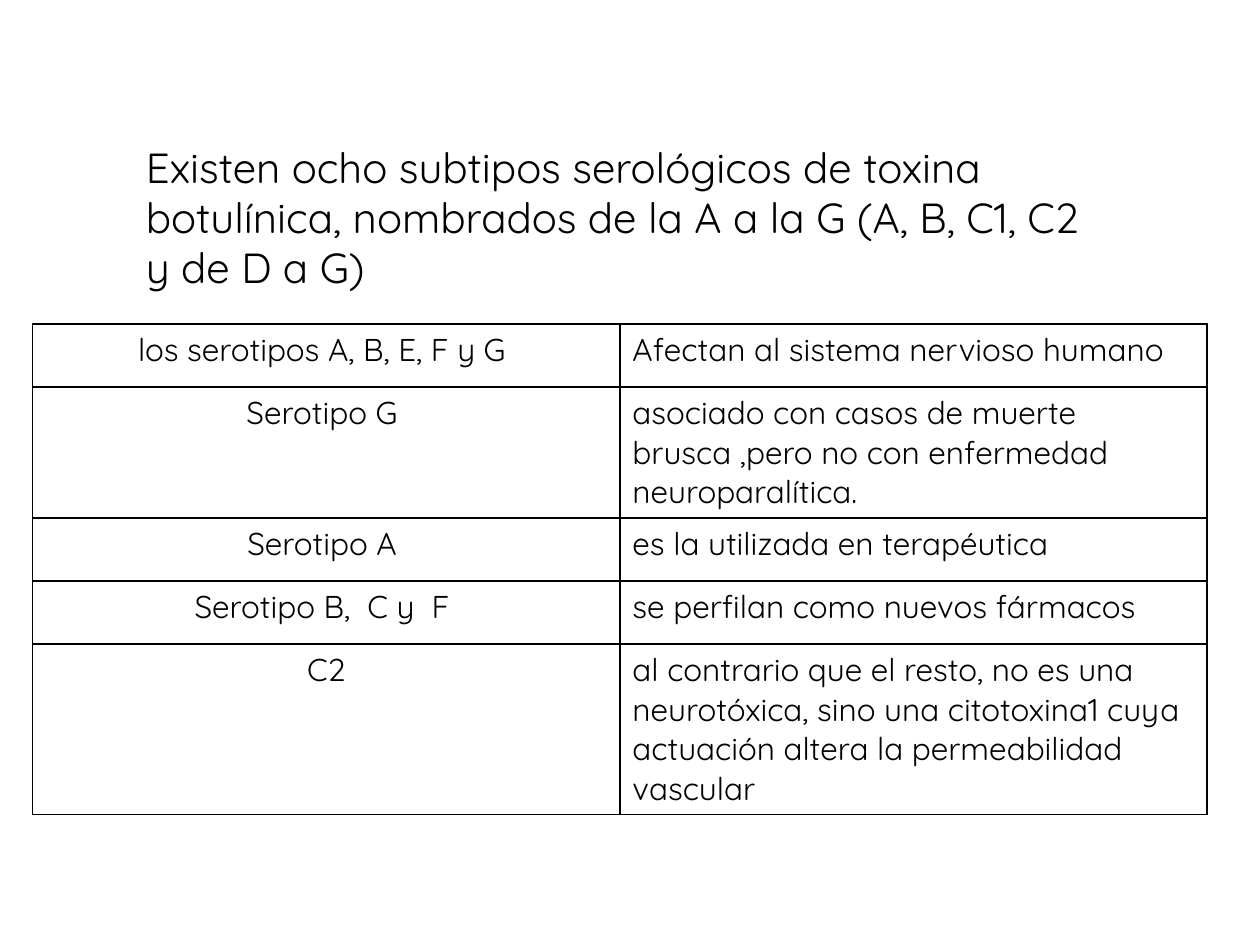
from typing import NamedTuple

from lxml import etree
from pptx import Presentation
from pptx import util as u
from pptx.dml.color import RGBColor
from pptx.enum import text as t
from pptx.oxml.ns import qn

FONT = "Quicksand"
HUES = {"ink": "000000"}


class Row(NamedTuple):
    type: str
    note: str
    high: float


ROWS = [
    Row("los serotipos A, B, E, F y G ", "Afectan al sistema nervioso humano", 0.5),
    Row("Serotipo G ", "asociado con casos de muerte brusca ,pero no con "
        "enfermedad neuroparalítica.", 0.87),
    Row("Serotipo A ", "es la utilizada en terapéutica", 0.5),
    Row("Serotipo B,  C y  F ", "se perfilan como nuevos fármacos", 0.5),
    Row("C2", "al contrario que el resto, no es una neurotóxica, sino una "
        "citotoxina1 cuya actuación altera la permeabilidad vascular", 1.24),
]


def write(frame, words: str, *, size: float = 18, align=t.PP_ALIGN.LEFT) -> None:
    frame.word_wrap = True
    para = frame.paragraphs[0]
    para.alignment = align
    run = para.add_run()
    run.text = words
    run.font.size = u.Pt(size)
    run.font.name = FONT
    run.font.color.rgb = RGBColor.from_string(HUES["ink"])


def frame_cell(cell, width: float = 1) -> None:
    """Clear the fill and rule all four sides."""
    cell.fill.background()
    props = cell._tc.get_or_add_tcPr()
    for spot, side in enumerate(("a:lnL", "a:lnR", "a:lnT", "a:lnB")):
        line = etree.Element(qn(side), w=str(u.Pt(width)))
        fill = etree.SubElement(line, qn("a:solidFill"))
        etree.SubElement(fill, qn("a:srgbClr"), val=HUES["ink"])
        props.insert(spot, line)


def draw_table(slide, rows: list[Row]) -> None:
    high = sum(row.high for row in rows)
    table = slide.shapes.add_table(
        len(rows), 2, u.Inches(0.26), u.Inches(2.57),
        u.Inches(9.32), u.Inches(high)).table
    table.first_row = table.horz_banding = False
    for i, row in enumerate(rows):
        table.rows[i].height = u.Inches(row.high)
        left, right = table.rows[i].cells
        write(left.text_frame, row.type, align=t.PP_ALIGN.CENTER)
        write(right.text_frame, row.note)
        for cell in (left, right):
            frame_cell(cell)


def main() -> None:
    deck = Presentation()
    deck.slide_width, deck.slide_height = u.Inches(10), u.Inches(7.5)
    slide = deck.slides.add_slide(deck.slide_layouts[6])

    # Serotype table
    draw_table(slide, ROWS)

    # Introduction
    intro = slide.shapes.add_textbox(
        u.Inches(1.06), u.Inches(1.07), u.Inches(7.72), u.Inches(1.21)).text_frame
    write(intro, "Existen ocho subtipos serológicos de toxina botulínica, "
          "nombrados de la A a la G (A, B, C1, C2 y de D a G)", size=24)
    intro.auto_size = t.MSO_AUTO_SIZE.SHAPE_TO_FIT_TEXT

    deck.save("out.pptx")


if __name__ == "__main__":
    main()
